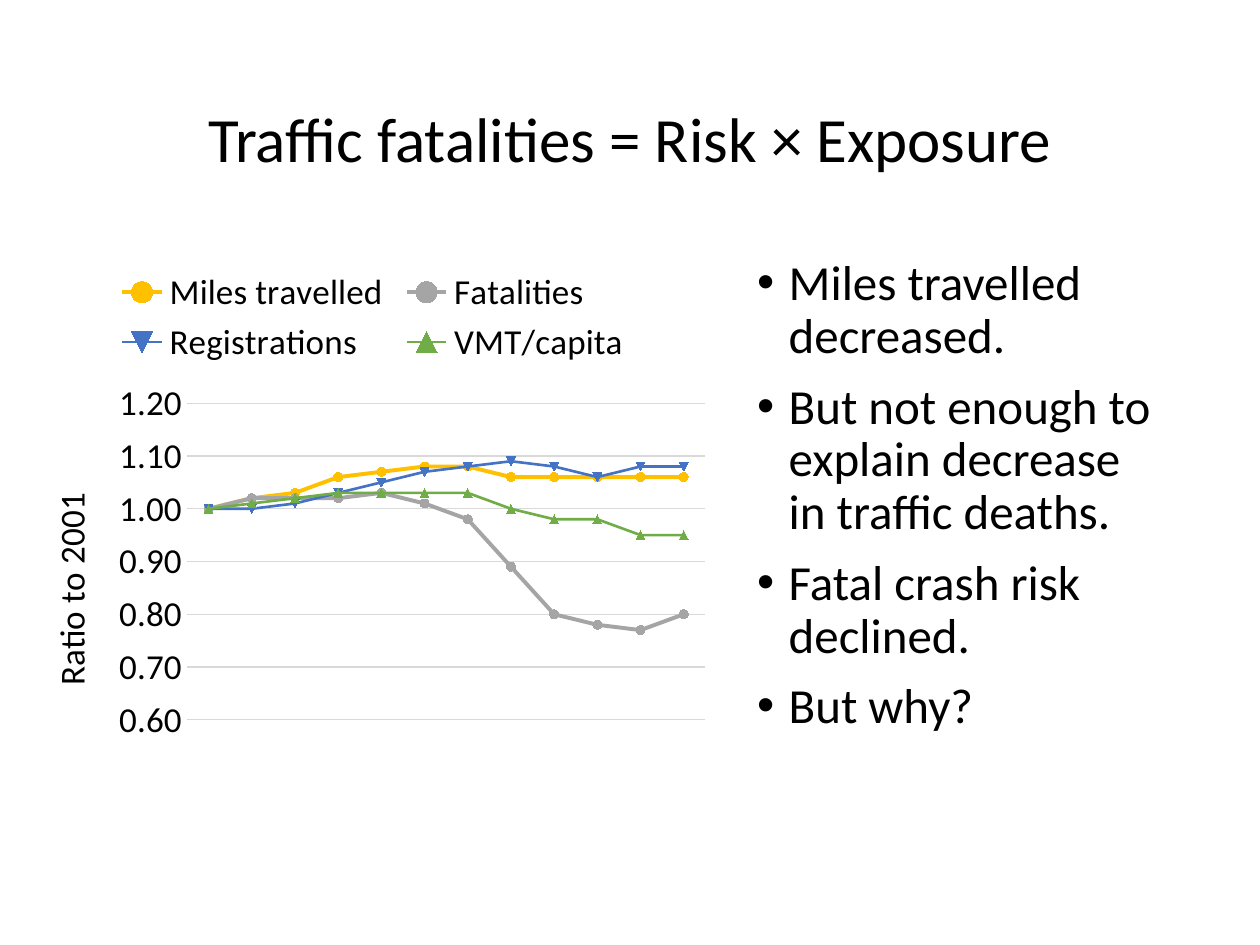
from dataclasses import dataclass

from lxml import etree
from pptx import Presentation
from pptx import util as u
from pptx.chart import data as chart_data
from pptx.dml.color import RGBColor
from pptx.enum import chart as ch
from pptx.enum import text as tx
from pptx.oxml import ns

Pt = u.Pt


@dataclass(frozen=True)
class Theme:
    font: str = "Calibri"
    title_size: int = 36
    body_size: int = 28
    chart_size: int = 20
    ink: str = "000000"
    grid: str = "D9D9D9"
    miles: str = "FFC000"
    fatalities: str = "A5A5A5"
    registrations: str = "4472C4"
    vmt: str = "70AD47"


THEME = Theme()

CIRCLE = ch.XL_MARKER_STYLE.CIRCLE
TRENDS = [
    ("Miles travelled", THEME.miles, 2.25, CIRCLE,
     [1, 1.02, 1.03, 1.06, 1.07, 1.08, 1.08, 1.06, 1.06, 1.06, 1.06, 1.06]),
    ("Fatalities", THEME.fatalities, 2.25, CIRCLE,
     [1, 1.02, 1.02, 1.02, 1.03, 1.01, 0.98, 0.89, 0.8, 0.78, 0.77, 0.8]),
    ("Registrations", THEME.registrations, 1.5, None,
     [1, 1, 1.01, 1.03, 1.05, 1.07, 1.08, 1.09, 1.08, 1.06, 1.08, 1.08]),
    ("VMT/capita", THEME.vmt, 1.5, None,
     [1, 1.01, 1.02, 1.03, 1.03, 1.03, 1.03, 1, 0.98, 0.98, 0.95, 0.95]),
]
FINDINGS = [
    "Miles travelled decreased.",
    "But not enough to explain decrease in traffic deaths.",
    "Fatal crash risk declined.",
    "But why?",
]


def rgb(color):
    return RGBColor.from_string(color)


def style_font(font, size):
    font.name = THEME.font
    font.size = Pt(size)
    font.bold = False
    font.color.rgb = rgb(THEME.ink)


def style_line(line, color, width):
    line.color.rgb = rgb(color)
    line.width = Pt(width)


def place(placeholder, box):
    placeholder.left, placeholder.top, placeholder.width, placeholder.height = map(Pt, box)
    frame = placeholder.text_frame
    frame.word_wrap = True
    frame.auto_size = tx.MSO_AUTO_SIZE.NONE
    return frame


def set_layout(part, successors, **values):
    for old in part.findall(ns.qn("c:layout")):
        part.remove(old)
    layout = etree.Element(ns.qn("c:layout"))
    manual = etree.SubElement(layout, ns.qn("c:manualLayout"))
    for key, value in values.items():
        etree.SubElement(manual, ns.qn(f"c:{key}")).set("val", str(value))
    following = next(child for child in part
                     if child.tag in [ns.qn(f"c:{name}") for name in successors])
    following.addprevious(layout)


def add_heading(slide, box, wording):
    frame = place(slide.shapes.title, box)
    frame.vertical_anchor = tx.MSO_ANCHOR.MIDDLE
    heading = frame.paragraphs[0]
    heading.text = wording
    heading.alignment = tx.PP_ALIGN.CENTER
    heading.line_spacing = 0.9
    style_font(heading.font, THEME.title_size)


def add_findings(slide, box, findings):
    frame = place(slide.placeholders[1], box)
    frame.text = "\n".join(findings)
    for finding in frame.paragraphs:
        finding.line_spacing = 0.9
        finding.space_before = Pt(10)
        style_font(finding.font, THEME.body_size)
        properties = finding._p.get_or_add_pPr()
        properties.set("marL", str(Pt(18)))
        properties.set("indent", str(-Pt(18)))
        bullet_font = etree.SubElement(properties, ns.qn("a:buFont"))
        bullet_font.set("typeface", "Arial")
        etree.SubElement(properties, ns.qn("a:buChar")).set("char", "•")
        for default in properties.findall(ns.qn("a:defRPr")):
            properties.append(default)


def style_axes(chart):
    years = chart.category_axis
    years.major_tick_mark = ch.XL_TICK_MARK.NONE
    years.tick_label_position = ch.XL_TICK_LABEL_POSITION.LOW
    style_line(years.format.line, THEME.grid, 0.75)
    style_font(years.tick_labels.font, THEME.chart_size)
    years._element.txPr.find(ns.qn("a:bodyPr")).set("rot", "-60000000")

    ratio = chart.value_axis
    ratio.minimum_scale = 0.6
    ratio.maximum_scale = 1.2
    ratio.major_unit = 0.1
    ratio.crosses = ch.XL_AXIS_CROSSES.MINIMUM
    ratio.major_tick_mark = ch.XL_TICK_MARK.NONE
    ratio.format.line.fill.background()
    style_line(ratio.major_gridlines.format.line, THEME.grid, 0.75)
    ratio.tick_labels.number_format = "0.00"
    ratio.tick_labels.number_format_is_linked = False
    style_font(ratio.tick_labels.font, THEME.chart_size)
    caption = ratio.axis_title.text_frame
    caption.text = "Ratio to 2001"
    style_font(caption.paragraphs[0].font, THEME.chart_size)
    body = caption._txBody.find(ns.qn("a:bodyPr"))
    body.set("rot", "-5400000")
    body.set("vert", "horz")
    set_layout(ratio.axis_title._element, ["overlay"],
               xMode="edge", yMode="edge", x=0.03, y=0.42)


def add_trends(slide, box, trends):
    ratios = chart_data.CategoryChartData(number_format="0.00")
    ratios.categories = [str(year) for year in range(2001, 2013)]
    for name, _, _, _, values in trends:
        ratios.add_series(name, values)
    chart = slide.shapes.add_chart(
        ch.XL_CHART_TYPE.LINE_MARKERS, *map(Pt, box), ratios).chart
    style_font(chart.font, THEME.chart_size)
    chart.has_title = False
    chart.plots[0].vary_by_categories = False
    for series, (_, color, width, marker, _) in zip(chart.plots[0].series, trends):
        series.smooth = False
        style_line(series.format.line, color, width)
        if marker:
            series.marker.style = marker
        series.marker.size = 5
        series.marker.format.fill.solid()
        series.marker.format.fill.fore_color.rgb = rgb(color)
        series.marker.format.line.color.rgb = rgb(color)
    style_axes(chart)
    chart.has_legend = True
    legend = chart.legend
    legend.position = ch.XL_LEGEND_POSITION.TOP
    legend.include_in_layout = False
    style_font(legend.font, THEME.chart_size)
    set_layout(legend._element, ["overlay"], xMode="edge", yMode="edge",
               x=0.13, y=0.02, w=0.75, h=0.19)
    set_layout(chart._chartSpace.chart.plotArea, ["lineChart"],
               layoutTarget="inner", xMode="edge", yMode="edge",
               x=0.24, y=0.27, w=0.74, h=0.57)


def main():
    deck = Presentation()
    deck.slide_width, deck.slide_height = Pt(720), Pt(540)
    slide = deck.slides.add_slide(deck.slide_layouts[1])
    add_trends(slide, (10.8, 144.7, 400.3, 317.5), TRENDS)
    add_heading(slide, (49.7, 28.8, 620.6, 104.4), "Traffic fatalities = Risk × Exposure")
    add_findings(slide, (425.5, 144, 244.8, 342.7), FINDINGS)
    deck.save("out.pptx")


if __name__ == "__main__":
    main()
